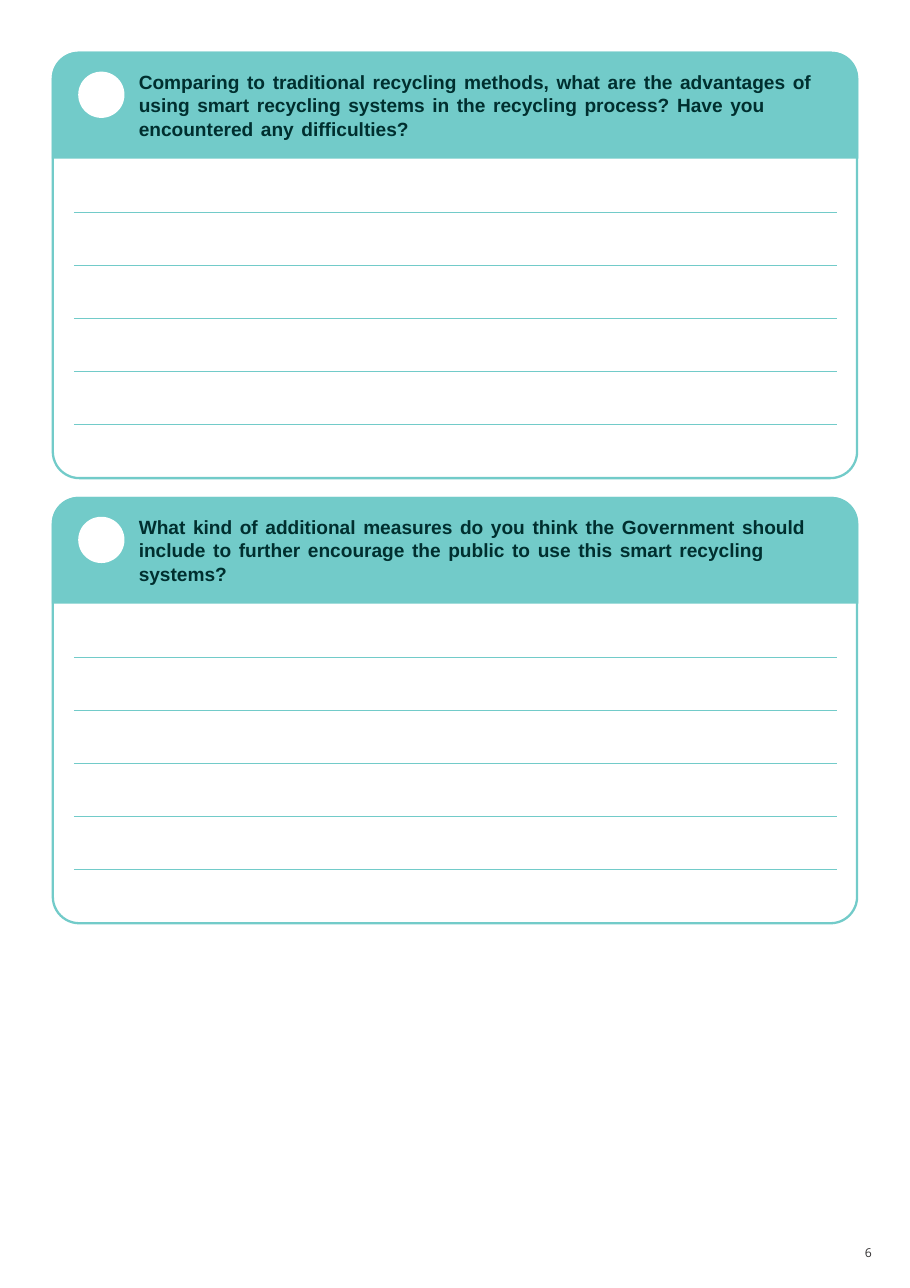
from pptx import Presentation
from pptx.dml.color import RGBColor
from pptx.enum.shapes import MSO_CONNECTOR, MSO_SHAPE
from pptx.oxml.ns import qn
from pptx.util import Inches, Pt
from lxml import etree

TEAL, WHITE, INK, GREY = "72CBC9", "FFFFFF", "002F2F", "323031"
LEFT, RIGHT = 0.67, 7.6
STEP, COUNT = 0.48, 5
RADIUS = 0.24

PANELS = [
    (0.47, [
        "Comparing to traditional recycling methods, what are the advantages "
        "of using smart recycling systems in the recycling process? Have you",
        "encountered any difficulties?",
    ]),
    (4.51, [
        "What kind of additional measures do you think the Government should "
        "include to further encourage the public to use this smart "
        "recycling systems?",
    ]),
]


def color(code):
    return RGBColor.from_string(code)


class Sheet:
    def __init__(self, slide):
        self.shapes = slide.shapes

    def shape(self, kind, x, y, w, h, fill=None, line=None, radius=None):
        item = self.shapes.add_shape(kind, Inches(x), Inches(y), Inches(w), Inches(h))
        item.shadow.inherit = False
        if radius:
            item.adjustments[0] = radius / min(w, h)
        if fill:
            item.fill.solid()
            item.fill.fore_color.rgb = color(fill)
        else:
            item.fill.background()
        if line:
            item.line.color.rgb = color(line)
            item.line.width = Pt(1.5)
        else:
            item.line.fill.background()

    def rule(self, y):
        item = self.shapes.add_connector(
            MSO_CONNECTOR.STRAIGHT, Inches(LEFT), Inches(y), Inches(RIGHT), Inches(y))
        item.line.color.rgb = color(TEAL)
        item.line.width = Pt(0.75)
        etree.SubElement(item._element.spPr, qn("a:effectLst"))

    def text(self, x, y, w, h, lines, font, size, ink, bold=False, lead=1.0, gap=0):
        """Write each line as a paragraph, with gap points added to every space."""
        frame = self.shapes.add_textbox(
            Inches(x), Inches(y), Inches(w), Inches(h)).text_frame
        frame.word_wrap = True
        frame.margin_left = frame.margin_right = 0
        frame.margin_top = frame.margin_bottom = 0
        for row, line in enumerate(lines):
            para = frame.paragraphs[0] if row == 0 else frame.add_paragraph()
            para.line_spacing = lead
            for spot, word in enumerate(line.split(" ")):
                for part in ([" ", word] if spot else [word]):
                    run = para.add_run()
                    run.text = part
                    run.font.name = font
                    run.font.size = Pt(size)
                    run.font.bold = bold
                    run.font.color.rgb = color(ink)
                    if part == " ":
                        run._r.get_or_add_rPr().set("spc", str(round(gap * 100)))

    def panel(self, top, lines):
        """Draw one question with its header and its ruled answer space."""
        self.shape(MSO_SHAPE.ROUNDED_RECTANGLE, 0.48, top + 0.01, 7.3, 3.86,
                   line=TEAL, radius=RADIUS)
        self.shape(MSO_SHAPE.ROUND_2_SAME_RECTANGLE, 0.47, top, 7.32, 0.97,
                   fill=TEAL, radius=RADIUS)
        self.shape(MSO_SHAPE.OVAL, 0.71, top + 0.18, 0.42, 0.42, fill=WHITE)
        self.text(1.26, top + 0.16, 6.34, 0.66, lines, "Arial", 12.5, INK,
                  bold=True, lead=1.03, gap=1.5)
        for row in range(COUNT):
            self.rule(top + 1.46 + row * STEP)


def main():
    deck = Presentation()
    deck.slide_width, deck.slide_height = Inches(8.26), Inches(11.69)
    sheet = Sheet(deck.slides.add_slide(deck.slide_layouts[6]))
    for top, lines in PANELS:
        sheet.panel(top, lines)
    sheet.text(7.85, 11.3, 0.19, 0.15, ["6"], "Open Sans", 8, GREY)
    deck.save("out.pptx")


if __name__ == "__main__":
    main()
